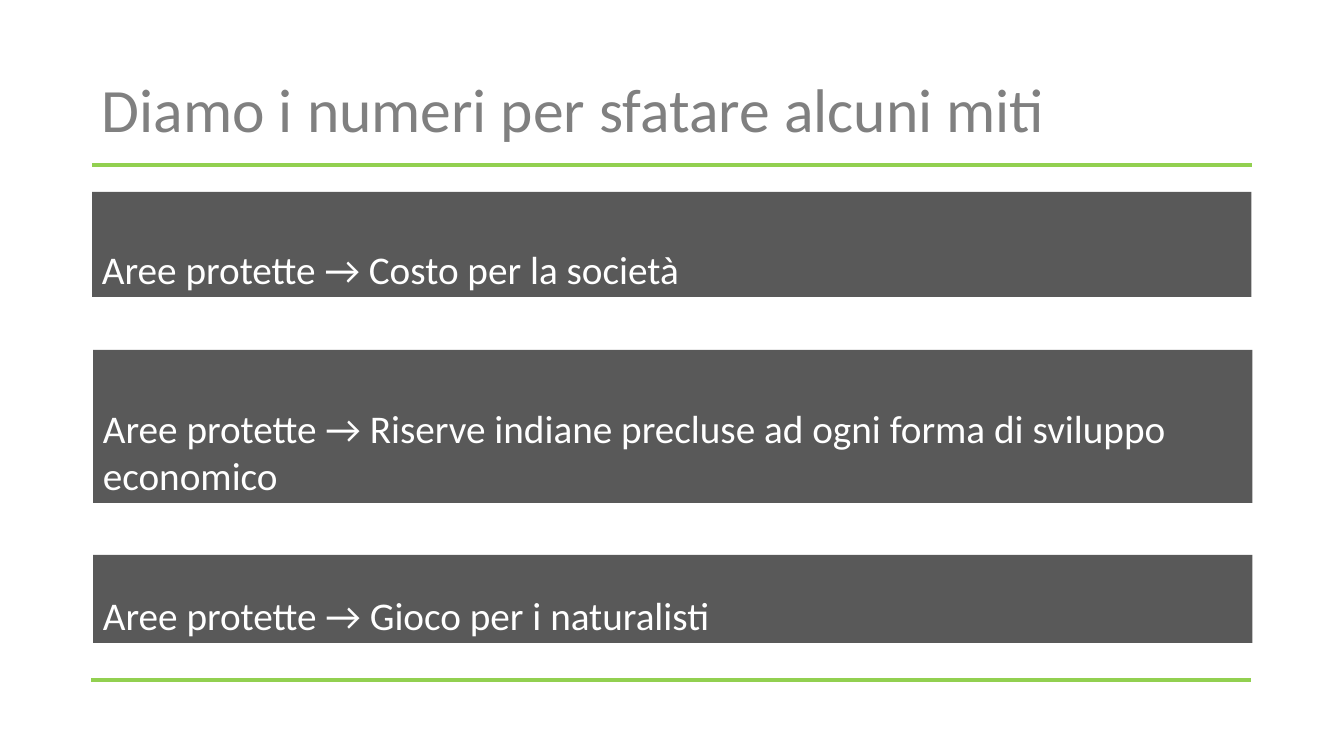
from lxml import etree
from pptx import Presentation
from pptx.dml.color import RGBColor
from pptx.enum.shapes import MSO_CONNECTOR, MSO_SHAPE
from pptx.enum.text import MSO_ANCHOR, PP_ALIGN
from pptx.oxml.ns import qn
from pptx.util import Inches, Pt

GREEN = RGBColor(0x92, 0xD0, 0x50)
DARK = RGBColor(0x59, 0x59, 0x59)
GRAY = RGBColor(0x80, 0x80, 0x80)
WHITE = RGBColor(0xFF, 0xFF, 0xFF)
STRAIGHT = MSO_CONNECTOR.STRAIGHT
RECT = MSO_SHAPE.RECTANGLE
MIDDLE = MSO_ANCHOR.MIDDLE
BOTTOM = MSO_ANCHOR.BOTTOM
LEFT = PP_ALIGN.LEFT
SCALE = 914400 / 100.8
WIDTH = 1159


def px(*values):
    return [round(value * SCALE) for value in values]


class Page:
    font = "Calibri"

    def __init__(self, slide):
        self.shapes = slide.shapes

    def label(self, shape, text, size, color, anchor):
        frame = shape.text_frame
        frame.word_wrap = True
        frame.vertical_anchor = anchor
        line = frame.paragraphs[0]
        line.text = text
        line.alignment = LEFT
        line.font.name = self.font
        line.font.size = Pt(size)
        line.font.color.rgb = color
        return line

    def title(self, text, left, top, height):
        box = self.shapes.add_textbox(*px(left, top, WIDTH, height))
        self.label(box, text, 44, GRAY, MIDDLE).line_spacing = 0.9

    def rule(self, left, top):
        line = self.shapes.add_connector(
            STRAIGHT, *px(left, top, left + WIDTH + 1, top))
        line.line.color.rgb = GREEN
        line.line.width = Pt(3)
        etree.SubElement(line._element.spPr, qn("a:effectLst"))

    def band(self, text, left, top, height):
        shape = self.shapes.add_shape(RECT, *px(left, top, WIDTH, height))
        shape.shadow.inherit = False
        shape.fill.solid()
        shape.fill.fore_color.rgb = DARK
        shape.line.fill.background()
        self.label(shape, text, 28, WHITE, BOTTOM)


def main():
    deck = Presentation()
    deck.slide_width = Inches(13.33)
    deck.slide_height = Inches(7.5)
    page = Page(deck.slides.add_slide(deck.slide_layouts[6]))
    page.rule(92, 165)
    page.rule(91, 680)
    page.title("Diamo i numeri per sfatare alcuni miti", 92, 40, 146)
    myths = [
        ("Costo per la società", 92, 192, 105),
        ("Riserve indiane precluse ad ogni forma di sviluppo economico",
         93, 350, 153),
        ("Gioco per i naturalisti", 93, 555, 88),
    ]
    for myth, left, top, height in myths:
        page.band(f"Aree protette → {myth}", left, top, height)
    deck.save("out.pptx")


if __name__ == "__main__":
    main()
